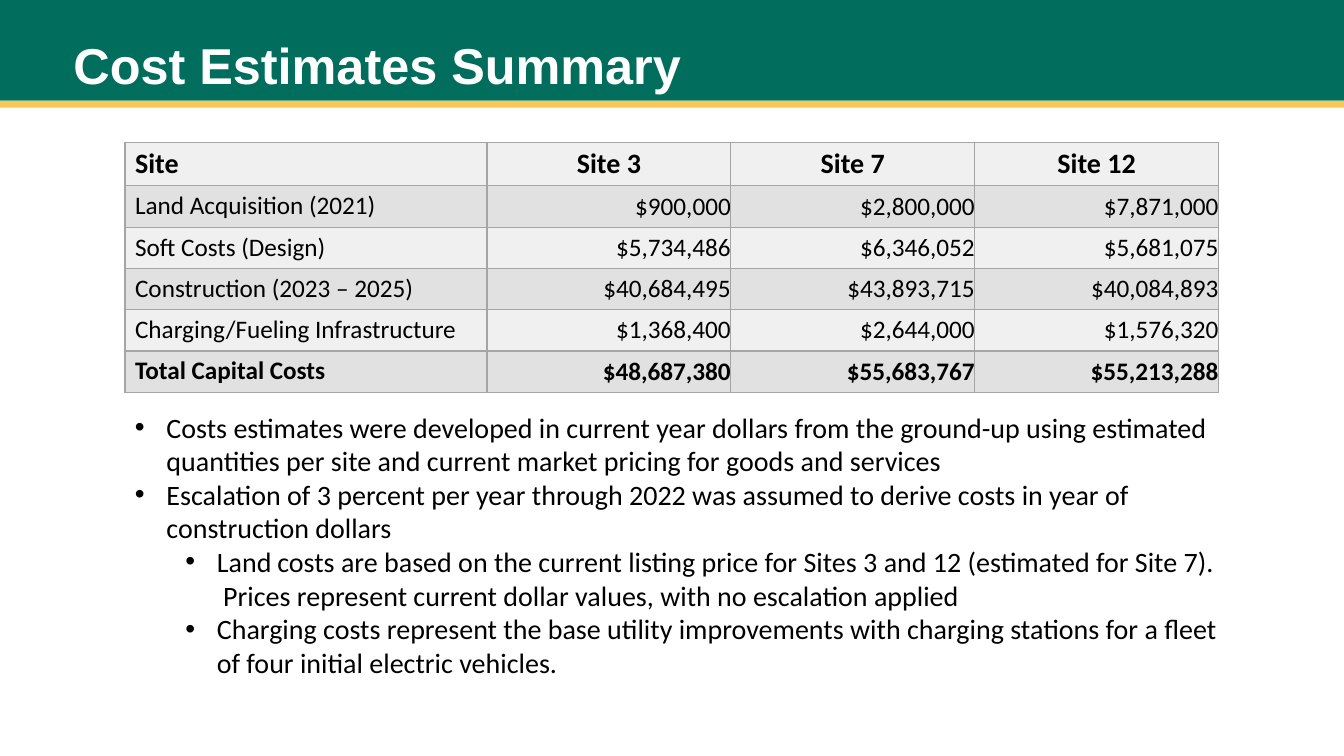
"""Build the cost estimates summary slide with its table and notes."""
import pptx
import pptx.dml.color
import pptx.enum.shapes
import pptx.enum.text
import pptx.oxml
import pptx.oxml.ns
import pptx.util
from dataclasses import dataclass

Pt = pptx.util.Pt
Align = pptx.enum.text.PP_ALIGN
Anchor = pptx.enum.text.MSO_ANCHOR


@dataclass(frozen=True)
class Theme:
    green: str = "006D5D"
    gold: str = "F9C753"
    white: str = "FFFFFF"
    black: str = "000000"
    border: str = "A5A5A5"
    bands: tuple = ("F0F0F0", "E1E1E1")
    heading_font: str = "Arial"
    body_font: str = "Calibri"
    title_size: int = 36
    large_size: int = 20
    small_size: int = 18


theme = Theme()


def add_span(para, text, size, color=theme.black, **font_format):
    span = para.add_run()
    span.text = text
    values = {"name": theme.body_font, "size": Pt(size), "bold": False, **font_format}
    for key, value in values.items():
        setattr(span.font, key, value)
    span.font.color.rgb = pptx.dml.color.RGBColor.from_string(color)


def add_xml(parent, tag, content, attributes=""):
    namespace = pptx.oxml.ns.nsdecls("a")
    parent.append(pptx.oxml.parse_xml(f"<a:{tag} {namespace} {attributes}>{content}</a:{tag}>"))


deck = pptx.Presentation()
deck.slide_width = Pt(960)
deck.slide_height = Pt(540)
page = deck.slides.add_slide(deck.slide_layouts[6])

for top, height, color in ((0, 72, theme.green), (72, 5, theme.gold)):
    band = page.shapes.add_shape(
        pptx.enum.shapes.MSO_SHAPE.RECTANGLE, Pt(0), Pt(top), deck.slide_width, Pt(height)
    )
    band.shadow.inherit = False
    band.fill.solid()
    band.fill.fore_color.rgb = pptx.dml.color.RGBColor.from_string(color)
    band.line.fill.background()

title_box = page.shapes.add_textbox(Pt(45.4), Pt(0.7), Pt(720), Pt(71.3))
title_box.text_frame.word_wrap = True
title_box.text_frame.vertical_anchor = Anchor.BOTTOM
title_para = title_box.text_frame.paragraphs[0]
title_para.line_spacing = 0.9
add_span(title_para, "Cost Estimates Summary", theme.title_size, theme.white,
         name=theme.heading_font, bold=True)

costs = (
    ("Site", "Site 3", "Site 7", "Site 12"),
    ("Land Acquisition (2021)", "$900,000", "$2,800,000", "$7,871,000"),
    ("Soft Costs (Design)", "$5,734,486", "$6,346,052", "$5,681,075"),
    ("Construction (2023 – 2025)", "$40,684,495", "$43,893,715", "$40,084,893"),
    ("Charging/Fueling Infrastructure", "$1,368,400", "$2,644,000", "$1,576,320"),
    ("Total Capital Costs", "$48,687,380", "$55,683,767", "$55,213,288"),
)
last_row = len(costs) - 1
amount_format = {"vertical_anchor": Anchor.MIDDLE, "margin_left": 0, "margin_right": 0,
                 "margin_top": 0, "margin_bottom": 0}
border_fill = f'<a:solidFill><a:srgbClr val="{theme.border}"/></a:solidFill>'

table = page.shapes.add_table(
    len(costs), len(costs[0]), Pt(89.3), Pt(101.5), Pt(781.2), Pt(177)
).table
for column, width in zip(table.columns, (258.6, 174.2, 174.2, 174.2)):
    column.width = Pt(width)

for row_index, row in enumerate(costs):
    table.rows[row_index].height = Pt(29.5)
    for column_index, text in enumerate(row):
        cell = table.cell(row_index, column_index)
        para = cell.text_frame.paragraphs[0]
        if column_index:
            para.alignment = Align.RIGHT if row_index else Align.CENTER
        if row_index and column_index:
            for key, value in amount_format.items():
                setattr(cell, key, value)
        size = theme.small_size if row_index else theme.large_size
        add_span(para, text, size, bold=row_index in (0, last_row))
        for side in ("lnL", "lnR", "lnT", "lnB"):
            add_xml(cell._tc.get_or_add_tcPr(), side, border_fill, f'w="{Pt(1)}"')
        cell.fill.solid()
        cell.fill.fore_color.rgb = pptx.dml.color.RGBColor.from_string(theme.bands[row_index % 2])

notes = (
    (0, (("Costs estimates were developed in current year dollars from the ground-up using "
          "estimated quantities per site and current market pricing for goods and services",
          theme.large_size),)),
    (0, (("Escalation of 3 percent per year through 2022 was assumed to derive costs in year of "
          "construction dollars", theme.large_size),)),
    (1, (("Land", theme.large_size), (" ", theme.small_size),
         ("costs are based on the current listing price for Sites 3 and 12 (estimated for "
          "Site 7).  Prices represent current dollar values, with no escalation applied",
          theme.large_size))),
    (1, (("Charging costs represent the base utility improvements with charging stations for a "
          "fleet of four initial electric vehicles.", theme.large_size),)),
)
notes_box = page.shapes.add_textbox(Pt(89.3), Pt(289.4), Pt(788.4), Pt(225.4))
notes_box.text_frame.word_wrap = True
for index, (level, spans) in enumerate(notes):
    frame = notes_box.text_frame
    para = frame.add_paragraph() if index else frame.paragraphs[0]
    para.level = level
    properties = para._p.get_or_add_pPr()
    properties.set("marL", str(Pt(22.5 + 36 * level)))
    properties.set("indent", str(Pt(-22.5)))
    add_xml(properties, "buFont", "", f'typeface="{theme.heading_font}"')
    add_xml(properties, "buChar", "", 'char="•"')
    for text, size in spans:
        add_span(para, text, size)

deck.save("out.pptx")
